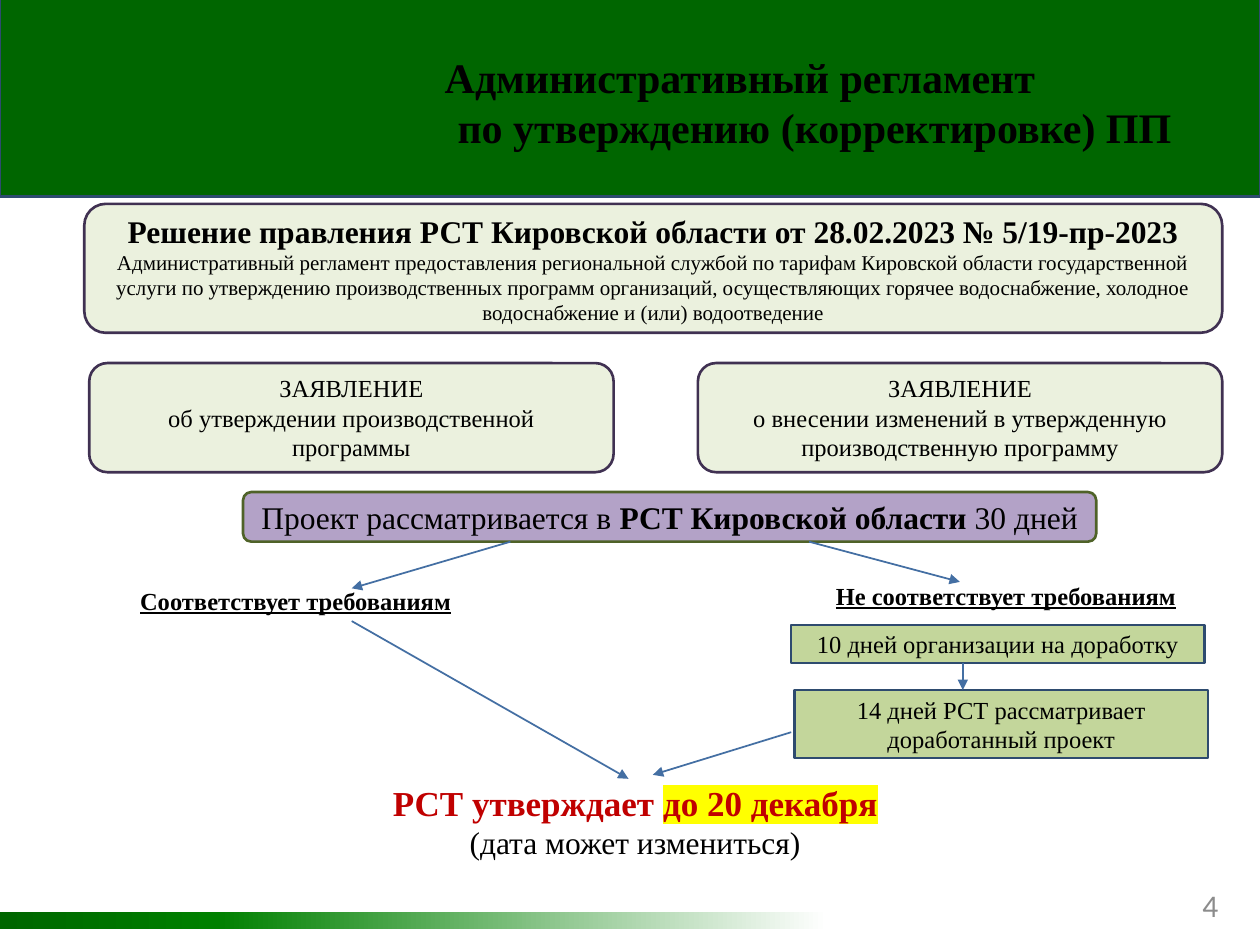
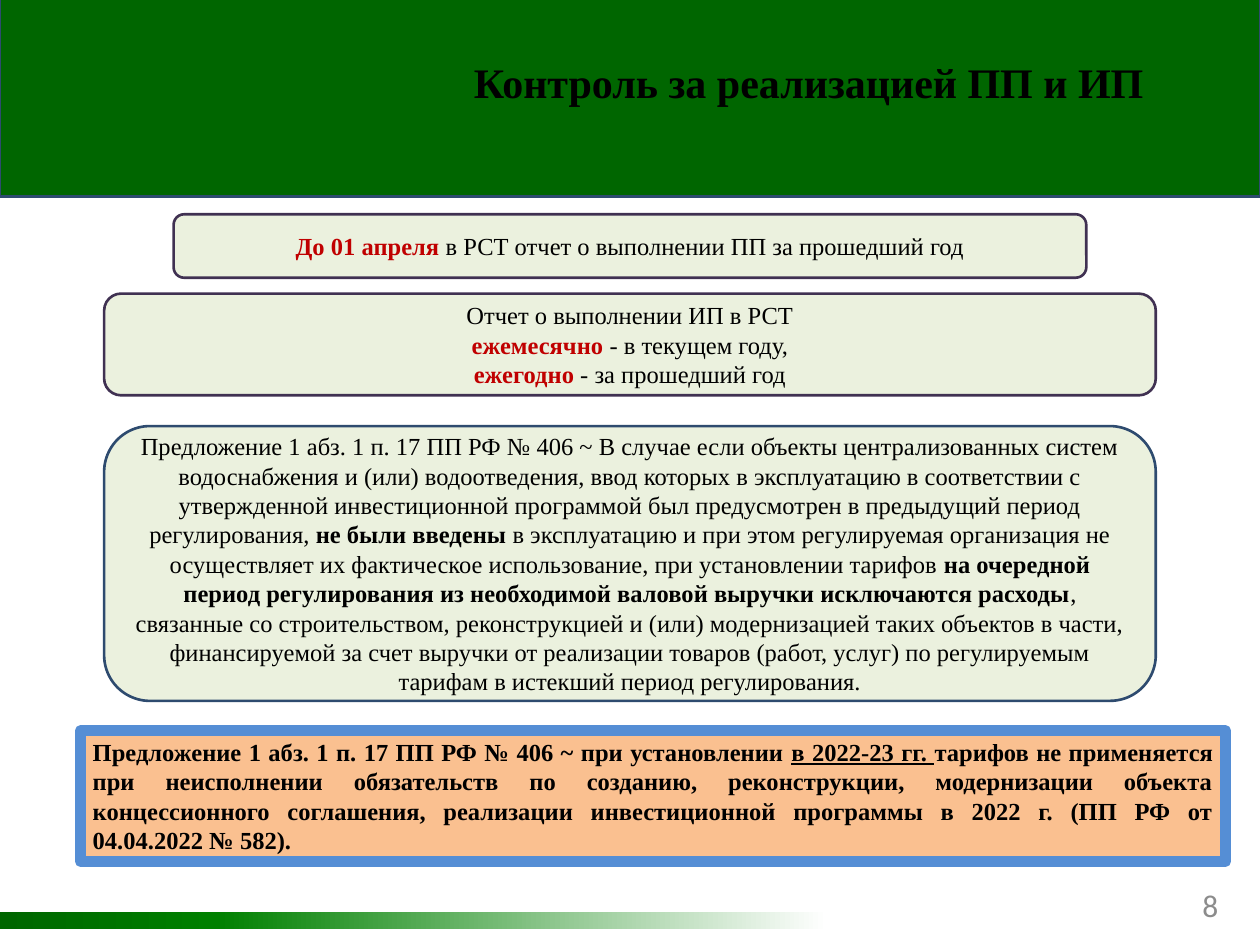
from dataclasses import dataclass

from lxml.etree import SubElement
from pptx import Presentation
from pptx.dml.color import RGBColor
from pptx.enum.shapes import MSO_CONNECTOR, MSO_SHAPE
from pptx.enum.text import MSO_ANCHOR, MSO_AUTO_SIZE, PP_ALIGN
from pptx.oxml.ns import qn
from pptx.util import Cm, Pt


@dataclass(frozen=True)
class Theme:
    font: str = "Times New Roman"
    number_font: str = "Calibri"
    title: int = 24
    accent: int = 20
    lead: int = 18
    body: int = 14
    small: int = 12
    black: str = "000000"
    red: str = "C00000"
    yellow: str = "FFFF00"
    gray: str = "8C8C8C"
    green: str = "006600"
    bright_green: str = "008000"
    white: str = "FFFFFF"
    navy: str = "2E4B6F"
    plum: str = "403152"
    arrow: str = "446FA3"


THEME = Theme()

# Box looks: fill, line colour, line width
CARD = ("EBF1DE", THEME.plum, 1.5)
RULE = ("EBF1DE", THEME.navy, 1.5)
REVIEW = ("B3A2C7", "4F6228", 1.5)
STEP = ("C3D69B", THEME.navy, 1.5)
NOTICE = ("FAC090", "558ED5", 6)

# Run looks
BOLD = {"bold": True}
RED = {"bold": True, "color": THEME.red}
SMALL = {"size": THEME.small}
LEAD = {"size": THEME.lead}
LEAD_BOLD = {**LEAD, **BOLD}
LINKED = {"bold": True, "underline": True}
DEADLINE = {**RED, "size": THEME.accent}

# Slide 1 content: a box text is a list of paragraphs, a paragraph a list of runs
REGULATION_TITLE = [("Административный регламент", 0.2),
                    ("по утверждению (корректировке) ПП", 0.46)]
REGULATION = [
    [("Решение правления РСТ Кировской области от 28.02.2023 № 5/19-пр-2023", LEAD_BOLD)],
    [("Административный регламент предоставления региональной службой по тарифам "
      "Кировской области государственной услуги по утверждению производственных программ "
      "организаций, осуществляющих горячее водоснабжение, холодное водоснабжение и (или) "
      "водоотведение", SMALL)],
]
APPLICATIONS = [
    "об утверждении производственной программы",
    "о внесении изменений в утвержденную производственную программу",
]
REVIEW_TEXT = [[("Проект рассматривается в ", LEAD),
                ("РСТ Кировской области", LEAD_BOLD), (" 30 дней", LEAD)]]
OUTCOMES = [
    ("Соответствует требованиям", (1.63, 11.68, 8.66, 0.86)),
    ("Не соответствует требованиям", (15.95, 11.58, 8.66, 0.86)),
]
STEPS = [
    ("10 дней организации на доработку", (15.95, 12.6, 8.33, 0.77)),
    ("14 дней РСТ рассматривает доработанный проект", (16.02, 13.91, 8.33, 1.37)),
]
APPROVAL = [
    [("РСТ утверждает ", DEADLINE), ("до 20 декабря", {**DEADLINE, "highlight": THEME.yellow})],
    [("(дата может измениться)", LEAD)],
]
ARROWS = [
    ((10.29, 10.92), (7.09, 11.86)),
    ((16.31, 10.92), (19.35, 11.73)),
    ((19.41, 13.37), (19.41, 13.91)),
    ((15.95, 14.76), (13.16, 15.62)),
    ((7.09, 12.52), (12.67, 15.7)),
]

# Slide 2 content
CONTROL_TITLE = [("Контроль за реализацией ПП и ИП", 0)]
PROGRAM_REPORT = [[("До 01 апреля ", RED),
                   ("в РСТ отчет о выполнении ПП за прошедший год", {})]]
INVESTMENT_REPORT = [
    [("Отчет о выполнении ИП в РСТ", {})],
    [("ежемесячно ", RED), ("- в текущем году,", {})],
    [("ежегодно", RED), (" - за прошедший год", {})],
]
EXCLUSION = [[
    ("Предложение 1 абз. 1 п. 17 ПП РФ № 406 ~ В случае если объекты централизованных систем "
     "водоснабжения и (или) водоотведения, ввод которых в эксплуатацию в соответствии с "
     "утвержденной инвестиционной программой был предусмотрен в предыдущий период "
     "регулирования, ", {}),
    ("не были введены ", BOLD),
    ("в эксплуатацию и при этом регулируемая организация не осуществляет их фактическое "
     "использование, при установлении тарифов ", {}),
    ("на очередной период регулирования из необходимой валовой выручки исключаются расходы",
     BOLD),
    (", связанные со строительством, реконструкцией и (или) модернизацией таких объектов в "
     "части, финансируемой за счет выручки от реализации товаров (работ, услуг) по "
     "регулируемым тарифам в истекший период регулирования.", {}),
]]
EXEMPTION = [[
    ("Предложение 1 абз. 1 п. 17 ПП РФ № 406 ~ при установлении ", BOLD),
    ("в 2022-23 гг. ", LINKED),
    ("тарифов не применяется при неисполнении обязательств по созданию, реконструкции, "
     "модернизации объекта концессионного соглашения, реализации инвестиционной программы "
     "в 2022 г. (ПП РФ от 04.04.2022 № 582).", BOLD),
]]


def rgb(code):
    return RGBColor.from_string(code)


# Text
def add_run(para, text, size=THEME.body, bold=False, color=THEME.black,
            underline=False, highlight=None, font=THEME.font):
    span = para.add_run()
    span.text = text
    span.font.name, span.font.size = font, Pt(size)
    span.font.bold, span.font.underline = bold, underline
    span.font.color.rgb = rgb(color)
    if highlight:
        props = span.font._element
        mark = SubElement(props, qn("a:highlight"))
        SubElement(mark, qn("a:srgbClr"), val=highlight)
        props.find(qn("a:solidFill")).addnext(mark)


def write(shape, paragraphs, align=PP_ALIGN.CENTER, anchor=MSO_ANCHOR.MIDDLE):
    frame = shape.text_frame
    frame.word_wrap = True
    frame.vertical_anchor = anchor
    for index, runs in enumerate(paragraphs):
        para = frame.add_paragraph() if index else frame.paragraphs[0]
        para.alignment = align
        for text, look in runs:
            add_run(para, text, **look)


# Shapes
def add_shape(page, place, kind=MSO_SHAPE.RECTANGLE):
    shape = page.shapes.add_shape(kind, *map(Cm, place))
    shape.shadow.inherit = False
    return shape


def add_box(page, place, look, paragraphs, kind=MSO_SHAPE.ROUNDED_RECTANGLE, **layout):
    box = add_shape(page, place, kind)
    fill, line, width = look
    box.fill.solid()
    box.fill.fore_color.rgb = rgb(fill)
    box.line.color.rgb = rgb(line)
    box.line.width = Pt(width)
    write(box, paragraphs, **layout)


def add_label(page, place, paragraphs, **layout):
    write(page.shapes.add_textbox(*map(Cm, place)), paragraphs, **layout)


def add_arrow(page, start, end):
    arrow = page.shapes.add_connector(MSO_CONNECTOR.STRAIGHT, *map(Cm, start + end))
    arrow.line.color.rgb = rgb(THEME.arrow)
    arrow.line.width = Pt(1)
    SubElement(arrow.line._get_or_add_ln(), qn("a:tailEnd"), type="triangle")
    SubElement(arrow._element.spPr, qn("a:effectLst"))


# Parts that every slide shares
def add_footer_strip(page):
    strip = add_shape(page, (0, 18.39, 16.69, 0.33))
    strip.line.fill.background()
    strip.fill.gradient()
    strip.fill.gradient_angle = 0
    stops = strip._element.spPr.find(qn("a:gradFill")).find(qn("a:gsLst"))
    for stop in list(stops):
        stops.remove(stop)
    for percent, color in ((0, THEME.green), (26, THEME.bright_green), (100, THEME.white)):
        stop = SubElement(stops, qn("a:gs"), pos=str(percent * 1000))
        SubElement(stop, qn("a:srgbClr"), val=color)


def add_page(deck, number, title_lines, title_place):
    page = deck.slides.add_slide(deck.slide_layouts[5])
    add_box(page, (0, -0.08, 25.4, 4.04), (THEME.green, THEME.navy, 1.5), [],
            kind=MSO_SHAPE.RECTANGLE)
    add_footer_strip(page)
    look = {"size": THEME.lead, "color": THEME.gray, "font": THEME.number_font}
    add_label(page, (23.29, 17.73, 1.52, 1.02), [[(str(number), look)]], align=PP_ALIGN.RIGHT)

    title = page.shapes.title
    title.left, title.top, title.width, title.height = map(Cm, title_place)
    title.text_frame.auto_size = MSO_AUTO_SIZE.NONE
    write(title, [[(text, {"size": THEME.title, **BOLD})] for text, _ in title_lines],
          align=PP_ALIGN.LEFT, anchor=MSO_ANCHOR.TOP)
    for para, (_, indent) in zip(title.text_frame.paragraphs, title_lines):
        para._p.get_or_add_pPr().set("marL", str(Cm(indent)))
    page.shapes._spTree.append(title._element)  # title above the band
    return page


def build_regulation(deck):
    page = add_page(deck, 4, REGULATION_TITLE, (8.51, 0.91, 15.8, 2.31))
    add_box(page, (1.7, 4.11, 22.94, 2.6), CARD, REGULATION)
    for column, subject in enumerate(APPLICATIONS):
        add_box(page, (1.8 + 12.27 * column, 7.32, 10.57, 2.2), CARD,
                [[("ЗАЯВЛЕНИЕ", {})], [(subject, {})]])
    add_box(page, (4.9, 9.92, 17.2, 1), REVIEW, REVIEW_TEXT)
    for text, place in OUTCOMES:
        add_label(page, place, [[(text, LINKED)]], anchor=MSO_ANCHOR.TOP)
    for text, place in STEPS:
        add_box(page, place, STEP, [[(text, {})]], kind=MSO_SHAPE.RECTANGLE)
    for start, end in ARROWS:
        add_arrow(page, start, end)
    add_label(page, (6.71, 15.62, 12.19, 1.88), APPROVAL, anchor=MSO_ANCHOR.TOP)


def build_control(deck):
    page = add_page(deck, 8, CONTROL_TITLE, (9.3, 1.02, 14.6, 1.27))
    add_box(page, (3.5, 4.32, 18.4, 1.28), CARD, PROGRAM_REPORT)
    add_box(page, (2.1, 5.92, 21.2, 2.05), CARD, INVESTMENT_REPORT)
    add_box(page, (2.1, 8.59, 21.2, 5.54), RULE, EXCLUSION)
    add_box(page, (1.62, 14.73, 23.09, 2.64), NOTICE, EXEMPTION, kind=MSO_SHAPE.RECTANGLE,
            align=PP_ALIGN.JUSTIFY, anchor=MSO_ANCHOR.TOP)


def main():
    deck = Presentation()
    deck.slide_width, deck.slide_height = Cm(25.4), Cm(19.05)
    build_regulation(deck)
    build_control(deck)
    deck.save("out.pptx")


if __name__ == "__main__":
    main()
